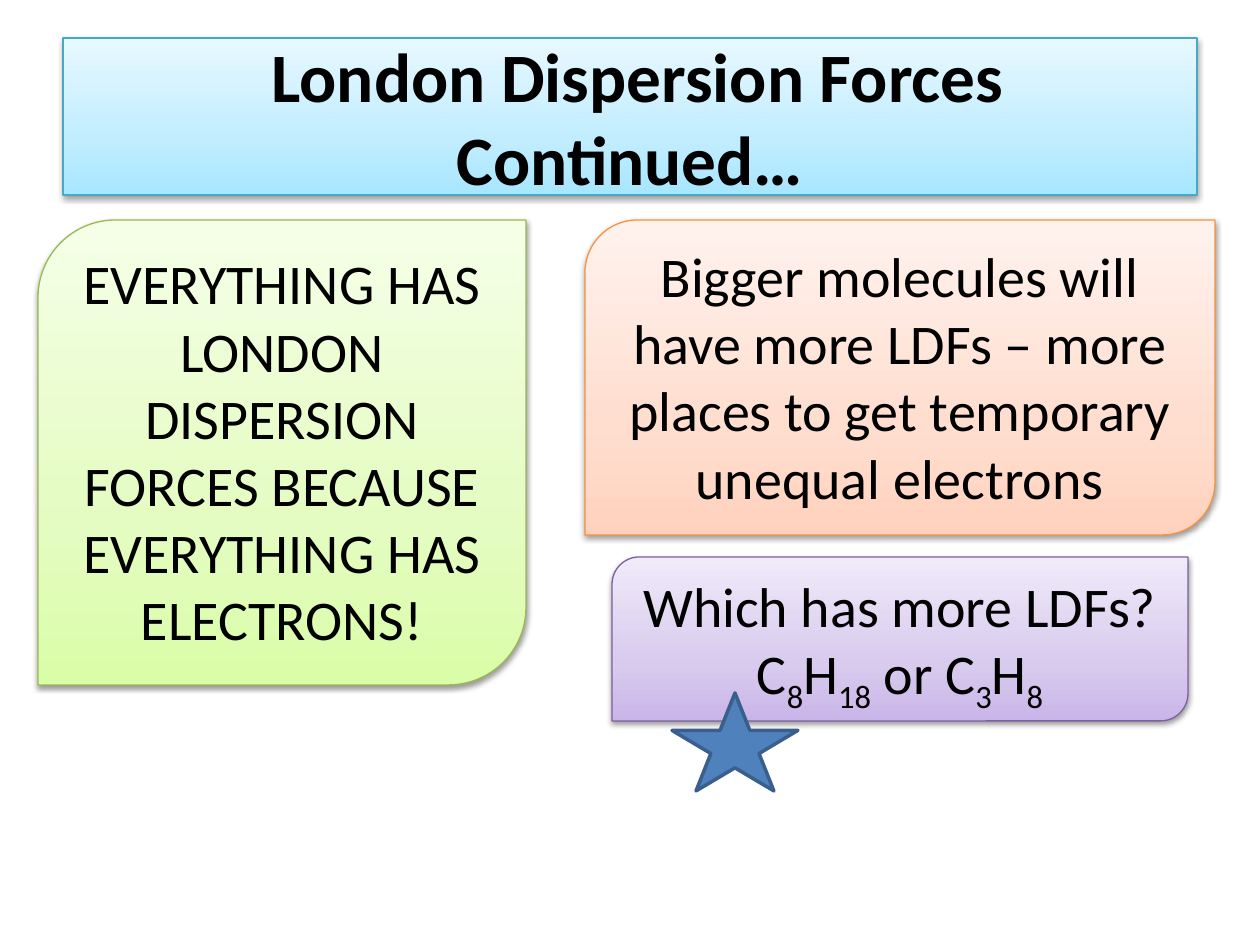
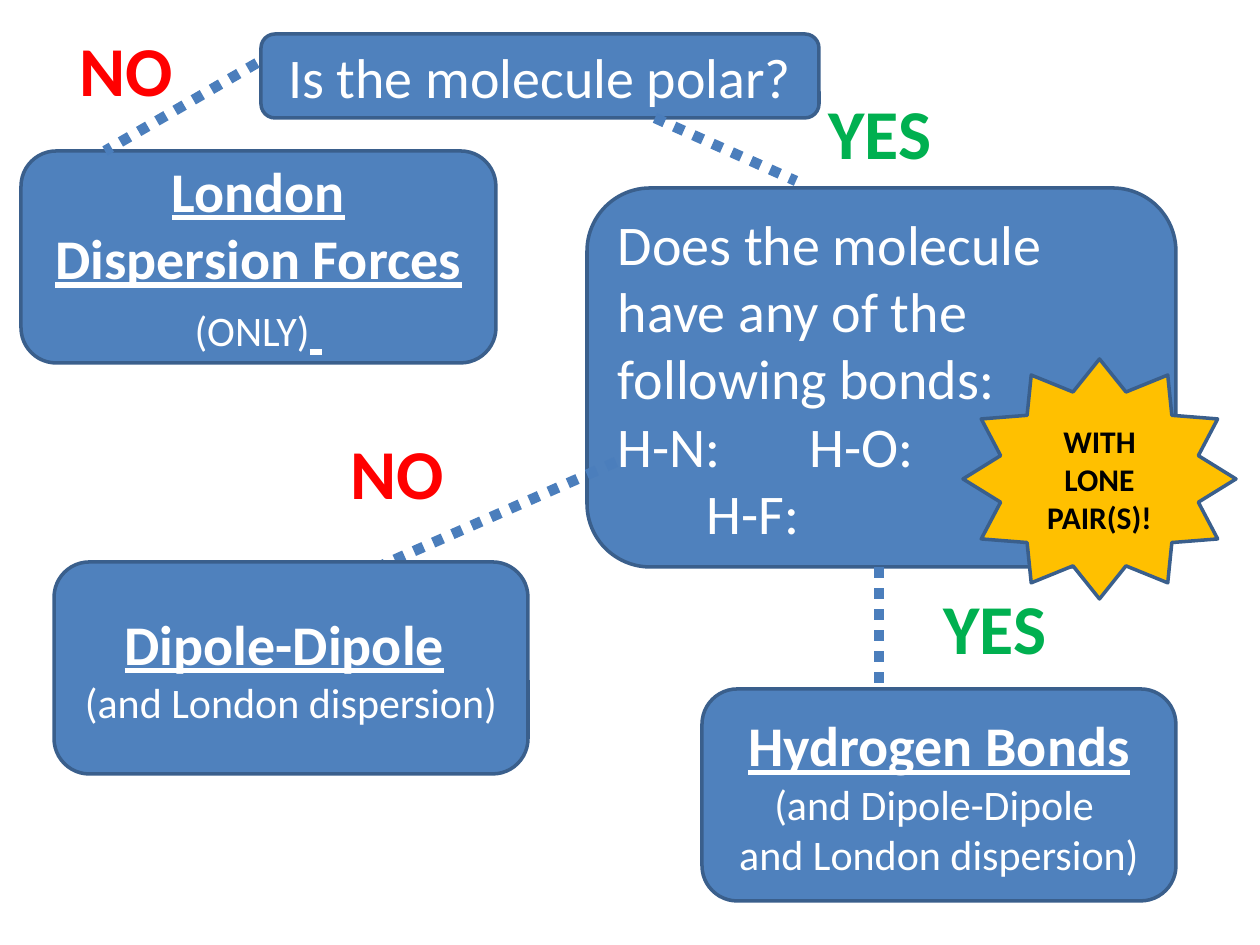
import copy

import lxml.etree
import pptx
import pptx.dml.color
import pptx.enum.dml
import pptx.enum.shapes
import pptx.enum.text
import pptx.oxml.ns
import pptx.util

RGBColor = pptx.dml.color.RGBColor
SHAPE = pptx.enum.shapes.MSO_SHAPE
ALIGN = pptx.enum.text.PP_ALIGN
ANCHOR = pptx.enum.text.MSO_ANCHOR
qn = pptx.oxml.ns.qn

PX_PER_INCH = 126
FONT = "Calibri"
BLACK = RGBColor(0x00, 0x00, 0x00)
WHITE = RGBColor(0xFF, 0xFF, 0xFF)
BLUE = RGBColor(0x4F, 0x81, 0xBD)
DARK_BLUE = RGBColor(0x3A, 0x5F, 0x8C)
LINK_BLUE = RGBColor(0x4B, 0x7E, 0xBC)
GOLD = RGBColor(0xFF, 0xC0, 0x00)
RED = RGBColor(0xFF, 0x00, 0x00)
GREEN = RGBColor(0x00, 0xB0, 0x50)

# Each palette: outline, then gradient colours from bottom to top.
AQUA_PALETTE = (RGBColor(0x46, 0xAA, 0xC5), RGBColor(0xA7, 0xE6, 0xFF),
                RGBColor(0xC1, 0xED, 0xFF), RGBColor(0xE7, 0xF8, 0xFF))
LIME_PALETTE = (RGBColor(0x98, 0xB9, 0x55), RGBColor(0xDA, 0xFD, 0xA7),
                RGBColor(0xE4, 0xFC, 0xC2), RGBColor(0xF5, 0xFF, 0xE7))
ORANGE_PALETTE = (RGBColor(0xF6, 0x92, 0x40), RGBColor(0xFF, 0xD2, 0xBD),
                  RGBColor(0xFF, 0xDE, 0xD0), RGBColor(0xFF, 0xF2, 0xED))
PURPLE_PALETTE = (RGBColor(0x7D, 0x60, 0xA0), RGBColor(0xC9, 0xB5, 0xE8),
                  RGBColor(0xD8, 0xCB, 0xEE), RGBColor(0xF0, 0xEA, 0xF9))
GRADIENT_POSITIONS = (0, 0.35, 1)

BODY = {"size": pptx.util.Pt(32)}
DETAIL = {"size": pptx.util.Pt(24)}
HEADING = BODY | {"bold": True, "underline": True}
TITLE = {"size": pptx.util.Pt(39.6), "bold": True}
ANSWER = {"size": pptx.util.Pt(40), "bold": True}
BURST = {"size": pptx.util.Pt(18), "bold": True}


def emu(px):
    return pptx.util.Emu(round(px * 914400 / PX_PER_INCH))


def write_text(shape, lines, color, anchor=ANCHOR.MIDDLE, align=ALIGN.CENTER):
    """Fill the shape; a line is a list of (text, format) runs."""
    frame = shape.text_frame
    frame.word_wrap = True
    frame.vertical_anchor = anchor
    for index, runs in enumerate(lines):
        paragraph = frame.paragraphs[0] if index == 0 else frame.add_paragraph()
        paragraph.alignment = align
        for text, text_format in runs:
            run = paragraph.add_run()
            run.text = text
            run.font.name = FONT
            run.font.color.rgb = color
            for name, value in text_format.items():
                setattr(run.font, name, value)


def add_outlined_shape(slide, kind, box, line_color, line_width):
    shape = slide.shapes.add_shape(kind, *map(emu, box))
    shape.shadow.inherit = False
    shape.line.color.rgb = line_color
    shape.line.width = pptx.util.Pt(line_width)
    return shape


def add_solid_shape(slide, kind, box, fill_color=BLUE):
    shape = add_outlined_shape(slide, kind, box, DARK_BLUE, 2)
    shape.fill.solid()
    shape.fill.fore_color.rgb = fill_color
    return shape


def add_soft_shadow(shape):
    effects = shape._element.spPr.find(qn("a:effectLst"))
    shadow = lxml.etree.SubElement(
        effects, qn("a:outerShdw"), blurRad="40000", dist="20000",
        dir="5400000", rotWithShape="0")
    color = lxml.etree.SubElement(shadow, qn("a:srgbClr"), val="000000")
    lxml.etree.SubElement(color, qn("a:alpha"), val="38000")


def add_gradient_shape(slide, kind, box, palette):
    line_color, *gradient_colors = palette
    shape = add_outlined_shape(slide, kind, box, line_color, 0.75)
    shape.fill.gradient()
    shape.fill.gradient_angle = 90
    stop_list = shape._element.spPr.find(".//" + qn("a:gsLst"))
    stop_list.append(copy.deepcopy(stop_list[0]))
    for stop, position, color in zip(
            shape.fill.gradient_stops, GRADIENT_POSITIONS, gradient_colors):
        stop.position = position
        stop.color.rgb = color
    add_soft_shadow(shape)
    return shape


def add_title(slide, box, text):
    shape = add_gradient_shape(slide, SHAPE.RECTANGLE, box, AQUA_PALETTE)
    shape.text_frame.margin_left = shape.text_frame.margin_right = emu(20)
    shape.text_frame.margin_top = shape.text_frame.margin_bottom = 0
    write_text(shape, [[(text, TITLE)]], BLACK)


def add_card(slide, box, palette, texts):
    """Every second text is a subscript."""
    shape = add_gradient_shape(
        slide, SHAPE.ROUND_2_DIAG_RECTANGLE, box, palette)
    write_text(shape, [[(text, BODY) for text in texts]], BLACK, ANCHOR.TOP)
    for run in shape.text_frame.paragraphs[0].runs[1::2]:
        run._r.get_or_add_rPr().set("baseline", "-25000")


def add_node(slide, box, lines, align=ALIGN.CENTER):
    shape = add_solid_shape(slide, SHAPE.FLOWCHART_ALTERNATE_PROCESS, box)
    write_text(shape, lines, WHITE, align=align)
    return shape


def add_bond_question(slide, box):
    shape = add_node(slide, box, [
        [("Does the molecule have any of the following bonds:", BODY)],
        [("H-N:\tH-O:", BODY)],
        [("H-F:", BODY)],
    ], ALIGN.LEFT)
    bond_row, last_bond = shape.text_frame.paragraphs[1:]
    tabs = lxml.etree.SubElement(
        bond_row._p.get_or_add_pPr(), qn("a:tabLst"))
    lxml.etree.SubElement(tabs, qn("a:tab"), pos=str(emu(192)), algn="l")
    last_bond._p.get_or_add_pPr().set("marL", str(emu(89)))


def add_answer(slide, box, text, color):
    label = slide.shapes.add_textbox(*map(emu, box))
    write_text(label, [[(text, ANSWER)]], color, ANCHOR.TOP)


def add_dotted_link(slide, ends):
    link = slide.shapes.add_connector(
        pptx.enum.shapes.MSO_CONNECTOR.STRAIGHT, *map(emu, ends))
    link.line.color.rgb = LINK_BLUE
    link.line.width = pptx.util.Pt(6)
    link.line.dash_style = pptx.enum.dml.MSO_LINE.ROUND_DOT
    lxml.etree.SubElement(link._element.spPr, qn("a:effectLst"))


def build_dispersion_slide(slide):
    add_title(slide, (63, 38, 1134, 157),
              " London Dispersion Forces Continued…")
    add_card(slide, (38, 220, 488, 465), LIME_PALETTE,
             ["EVERYTHING HAS LONDON DISPERSION FORCES BECAUSE "
              "EVERYTHING HAS ELECTRONS!"])
    add_card(slide, (585, 220, 630, 315), ORANGE_PALETTE,
             ["Bigger molecules will have more LDFs – more places to get "
              "temporary unequal electrons"])
    add_card(slide, (612, 557, 576, 164), PURPLE_PALETTE,
             ["Which has more LDFs? C", "8", "H", "18", " or C", "3", "H", "8"])
    add_solid_shape(slide, SHAPE.STAR_5_POINT, (672, 693, 126, 98))


def build_decision_slide(slide):
    add_node(slide, (261, 34, 558, 84), [[("Is the molecule polar?", BODY)]])
    add_bond_question(slide, (587, 188, 589, 379))
    add_node(slide, (21, 151, 475, 212), [
        [("London Dispersion Forces", HEADING)],
        [("(ONLY)", DETAIL), (" ", HEADING)],
    ])

    for box, text, color in (
            ((775, 83, 210, 97), "YES", GREEN),
            ((21, 20, 210, 97), "NO", RED),
            ((292, 423, 210, 97), "NO", RED),
            ((913, 578, 164, 97), "YES", GREEN)):
        add_answer(slide, box, text, color)

    for ends in ((655, 118, 796, 181), (257, 63, 105, 151),
                 (616, 462, 378, 567), (879, 567, 879, 689)):
        add_dotted_link(slide, ends)

    add_node(slide, (54, 562, 474, 212), [
        [("Dipole-Dipole", HEADING), (" ", BODY)],
        [("(and London dispersion)", DETAIL)],
    ])
    add_node(slide, (702, 689, 474, 212), [
        [("Hydrogen Bonds", HEADING)],
        [("(and Dipole-Dipole ", DETAIL)],
        [("and London dispersion)", DETAIL)],
    ])
    burst = add_solid_shape(
        slide, SHAPE.STAR_12_POINT, (963, 359, 273, 240), GOLD)
    write_text(burst, [[("WITH LONE PAIR(S)!", BURST)]], BLACK)


def main():
    presentation = pptx.Presentation()
    presentation.slide_width = emu(1260)
    presentation.slide_height = emu(945)
    blank_layout = presentation.slide_layouts[6]
    for build_slide in (build_dispersion_slide, build_decision_slide):
        build_slide(presentation.slides.add_slide(blank_layout))
    presentation.save("out.pptx")


if __name__ == "__main__":
    main()
